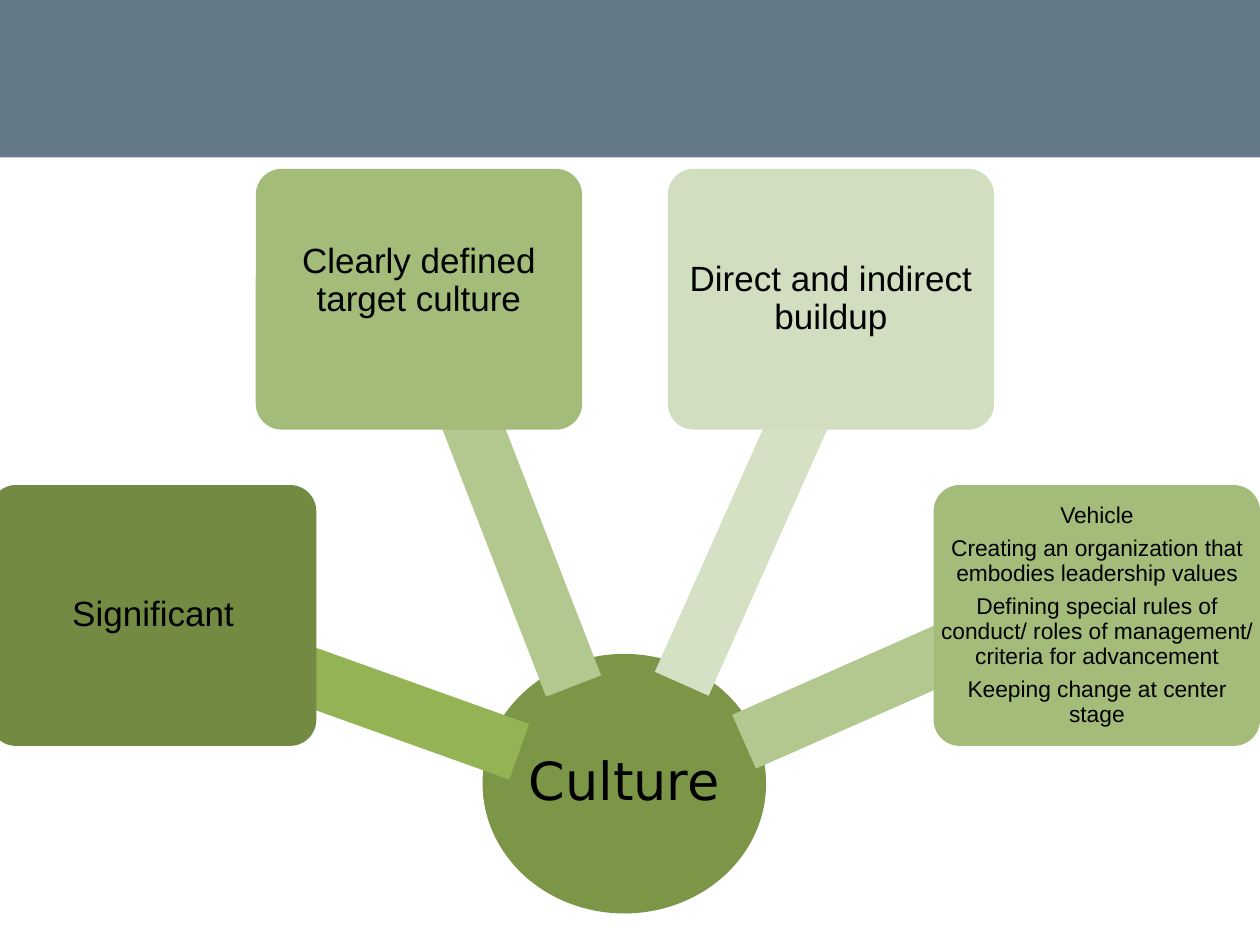
from pptx import Presentation
from pptx.dml.color import RGBColor
from pptx.enum.shapes import MSO_SHAPE
from pptx.enum.text import MSO_ANCHOR, PP_ALIGN
from pptx.util import Inches, Pt

RECTANGLE = MSO_SHAPE.RECTANGLE
ELLIPSE = MSO_SHAPE.OVAL
ROUNDED = MSO_SHAPE.ROUNDED_RECTANGLE
ARROW = MSO_SHAPE.LEFT_ARROW
MIDDLE = MSO_ANCHOR.MIDDLE
CENTER = PP_ALIGN.CENTER

CARD_SIZE = (2.59, 2.07)
SPOKES = [
    dict(corner=(-0.08, 3.85), color="738A42", arrow_color="94B355",
         arrow_box=(1.49, 5.12, 2.71, 0.78), angle=19.7,
         lines=["Significant"]),
    dict(corner=(2.03, 1.34), color="A4BC79", arrow_color="B3C88E",
         arrow_box=(2.53, 3.67, 2.97, 0.78), angle=68.8,
         lines=["Clearly defined target culture"], bottom=0.33),
    dict(corner=(5.3, 1.34), color="D2DEC0", arrow_color="D5E1C4",
         arrow_box=(4.53, 3.68, 2.97, 0.78), angle=114,
         lines=["Direct and indirect buildup"]),
    dict(corner=(7.41, 3.85), color="A4BC79", arrow_color="B3C88E",
         arrow_box=(5.79, 4.95, 2.71, 0.78), angle=156.2,
         lines=["Vehicle",
                "Creating an organization that embodies leadership values",
                "Defining special rules of conduct/ roles of management/ "
                "criteria for advancement",
                "Keeping change at center stage"],
         size=13, inset=0.03),
]


def rgb(color):
    return RGBColor.from_string(color)


def add_filled(slide, kind, box, color, adjustments=(), angle=0):
    shape = slide.shapes.add_shape(kind, *map(Inches, box))
    shape.shadow.inherit = False
    shape.fill.solid()
    shape.fill.fore_color.rgb = rgb(color)
    shape.line.fill.background()
    for index, value in enumerate(adjustments):
        shape.adjustments[index] = value
    shape.rotation = angle


def add_text(slide, box, lines, size=20, font="Arial", color="000000",
             inset=0.04, bottom=None):
    frame = slide.shapes.add_textbox(*map(Inches, box)).text_frame
    frame.word_wrap = True
    frame.vertical_anchor = MIDDLE
    frame.margin_left = frame.margin_right = frame.margin_top = Inches(inset)
    frame.margin_bottom = Inches(inset if bottom is None else bottom)
    for index, line in enumerate(lines):
        paragraph = frame.paragraphs[0] if index == 0 else frame.add_paragraph()
        paragraph.text = line
        paragraph.alignment = CENTER
        paragraph.line_spacing = 0.9
        paragraph.space_before = Pt(5 if index else 0)
        paragraph.font.size = Pt(size)
        paragraph.font.name = font
        paragraph.font.color.rgb = rgb(color)


def add_hub(slide, box):
    add_filled(slide, ELLIPSE, box, "7C9647")
    add_text(slide, box, ["Culture"], size=30, font="DejaVu Sans", inset=0.02)


def add_spoke(slide, corner, color, arrow_box, arrow_color, angle, lines,
              **text_format):
    card_box = corner + CARD_SIZE
    add_filled(slide, ARROW, arrow_box, arrow_color, (0.6, 0.5), angle)
    add_filled(slide, ROUNDED, card_box, color, (0.1,))
    add_text(slide, card_box, lines, **text_format)


def main():
    presentation = Presentation()
    presentation.slide_width = Inches(10)
    presentation.slide_height = Inches(7.5)
    slide = presentation.slides.add_slide(presentation.slide_layouts[6])
    add_filled(slide, RECTANGLE, (0, 0, 10, 1.25), "647A88")
    add_hub(slide, (3.83, 5.19, 2.25, 2.06))
    for spoke in SPOKES:
        add_spoke(slide, **spoke)
    presentation.save("out.pptx")


if __name__ == "__main__":
    main()
